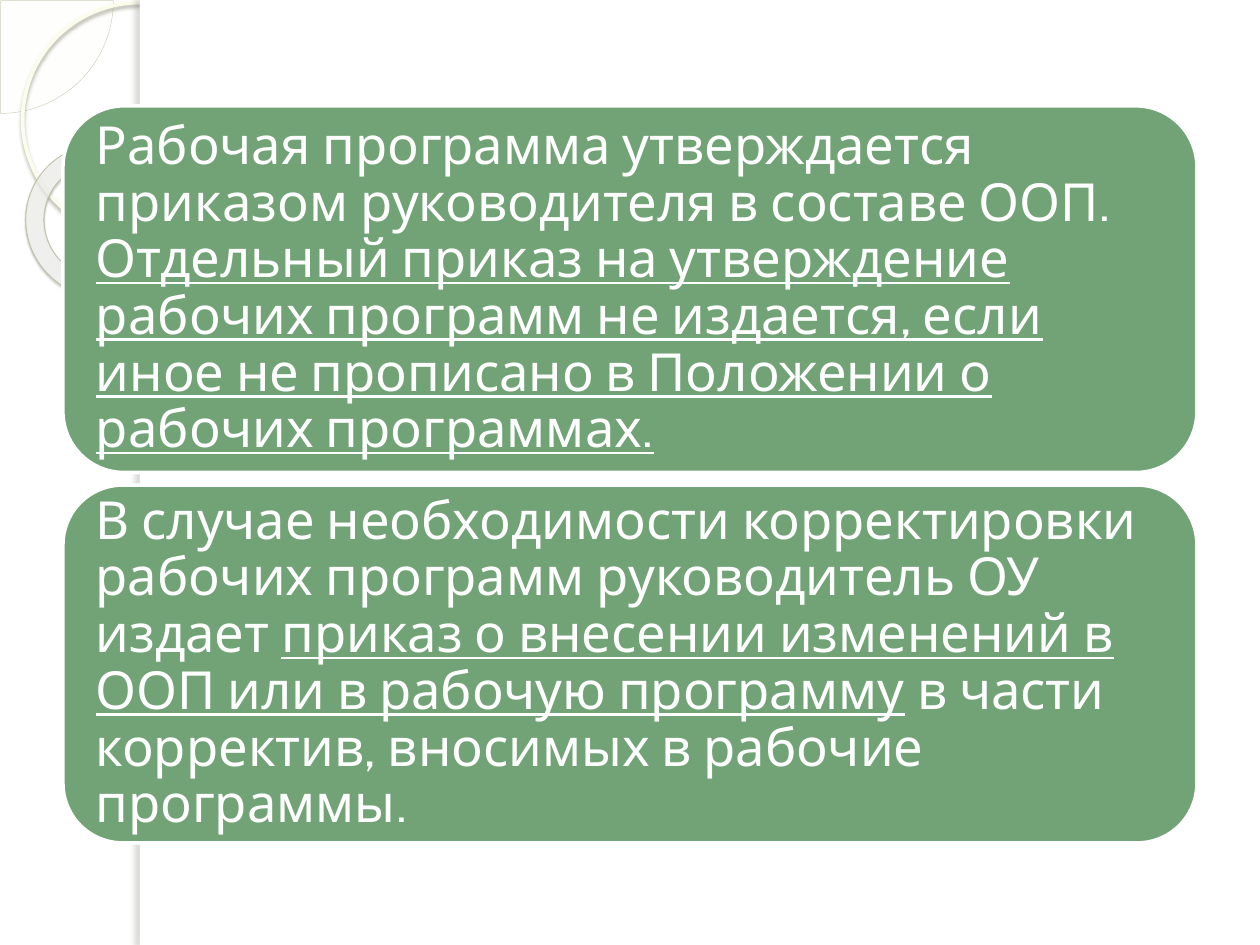
import dataclasses

import pptx
import pptx.dml.color
import pptx.enum.shapes
import pptx.enum.text
import pptx.oxml
import pptx.oxml.ns
import pptx.util

SLIDE_WIDTH, SLIDE_HEIGHT = 10, 7.5
SHAPES = pptx.enum.shapes.MSO_SHAPE
DRAWING_NAMESPACE = pptx.oxml.ns.nsdecls("a")


@dataclasses.dataclass(frozen=True)
class Theme:
    paper: str = "FFFFFF"
    banner: str = "72A376"
    pie: str = "FCFDF8"
    pie_line: str = "CDCFB9"
    ring_line: str = "FBFCEB"
    ring_shadow: tuple = ("AFB0A2", 85, 2, 2, 90)
    donut_stops: tuple = ((0, "FDFDF9", 70), (70, "FFFFFC", 55), (100, "DCDFB4", 60))
    donut_line: str = "C1C2AC"
    donut_shadow: tuple = ("58594F", 35, 1, 1.2, 75)
    edge_shadow: tuple = ("75756E", 25, 3, 3, 180)
    font: str = "Cabin"
    text_size: int = 30


THEME = Theme()
BANNERS = (
    (2.91, (
        ("Рабочая программа утверждается приказом руководителя в составе ООП. ", False),
        ("Отдельный приказ на утверждение рабочих программ не издается, если иное "
         "не прописано в Положении о рабочих программах.", True),
    )),
    (2.84, (
        ("В случае необходимости корректировки рабочих программ руководитель ОУ издает ", False),
        ("приказ о внесении изменений в ООП или в рабочую программу", True),
        (" в части корректив, вносимых в рабочие программы.", False),
    )),
)


def rgb(value):
    return pptx.dml.color.RGBColor.from_string(value)


def color_xml(value, opacity):
    return (f'<a:srgbClr val="{value}">'
            f'<a:alpha val="{opacity * 1000}"/></a:srgbClr>')


def add_shadow(shape, color, opacity, blur, distance, angle):
    shadow = pptx.oxml.parse_xml(
        f'<a:outerShdw {DRAWING_NAMESPACE} blurRad="{pptx.util.Pt(blur)}" '
        f'dist="{pptx.util.Pt(distance)}" dir="{angle * 60000}" '
        f'algn="tl" rotWithShape="0">{color_xml(color, opacity)}</a:outerShdw>')
    shape._element.spPr.find(pptx.oxml.ns.qn("a:effectLst")).append(shadow)


def add_figure(slide, kind, box, fill=None, line=None, line_width=0, shadow=None):
    shape = slide.shapes.add_shape(kind, *map(pptx.util.Inches, box))
    shape.shadow.inherit = False
    if fill:
        shape.fill.solid()
        shape.fill.fore_color.rgb = rgb(fill)
    else:
        shape.fill.background()
    if line:
        shape.line.color.rgb = rgb(line)
        shape.line.width = pptx.util.Pt(line_width)
    else:
        shape.line.fill.background()
    if shadow:
        add_shadow(shape, *shadow)
    return shape


def set_opacity(shape, opacity):
    solid = shape._element.spPr.find(pptx.oxml.ns.qn("a:solidFill"))
    solid[0].append(pptx.oxml.parse_xml(
        f'<a:alpha {DRAWING_NAMESPACE} val="{opacity * 1000}"/>'))


def set_radial_gradient(shape, stops, left, top, right, bottom):
    stops_xml = "".join(f'<a:gs pos="{position * 1000}">{color_xml(color, opacity)}</a:gs>'
                        for position, color, opacity in stops)
    gradient = pptx.oxml.parse_xml(
        f'<a:gradFill {DRAWING_NAMESPACE} rotWithShape="1"><a:gsLst>{stops_xml}</a:gsLst>'
        f'<a:path path="circle"><a:fillToRect l="{left * 1000}" t="{top * 1000}" '
        f'r="{right * 1000}" b="{bottom * 1000}"/></a:path></a:gradFill>')
    properties = shape._element.spPr
    properties.replace(properties.find(pptx.oxml.ns.qn("a:noFill")), gradient)


def add_corner_ornament(slide):
    pie = add_figure(slide, SHAPES.PIE, (-0.89, -0.89, 1.79, 1.79),
                     THEME.pie, THEME.pie_line, 0.25)
    pie.adjustments[0] = 0
    pie.adjustments[1] = 54
    set_opacity(pie, 33)
    add_figure(slide, SHAPES.OVAL, (0.18, 0.02, 1.86, 1.86),
               line=THEME.ring_line, line_width=2.15, shadow=THEME.ring_shadow)
    donut = add_figure(slide, SHAPES.DONUT, (0.2, 1.15, 1.23, 1.21),
                       line=THEME.donut_line, line_width=0.58, shadow=THEME.donut_shadow)
    donut.adjustments[0] = 0.12
    donut.rotation = 38.6
    set_radial_gradient(donut, THEME.donut_stops, -408, -50, 508, 150)


def add_page(slide):
    left = 1.11
    add_figure(slide, SHAPES.RECTANGLE, (left, 0, SLIDE_WIDTH - left, SLIDE_HEIGHT), THEME.paper)
    add_figure(slide, SHAPES.RECTANGLE, (left, 0, 0.08, SLIDE_HEIGHT),
               THEME.paper, shadow=THEME.edge_shadow)


def add_banner(slide, top, height, passages):
    margin = SLIDE_WIDTH * 0.05
    banner = add_figure(slide, SHAPES.ROUNDED_RECTANGLE,
                        (margin, top, SLIDE_WIDTH - 2 * margin, height),
                        THEME.banner, THEME.paper, 2)
    frame = banner.text_frame
    frame.word_wrap = True
    frame.vertical_anchor = pptx.enum.text.MSO_ANCHOR.MIDDLE
    inset = pptx.util.Inches(0.12)
    frame.margin_left = frame.margin_right = inset
    frame.margin_top = frame.margin_bottom = inset
    paragraph = frame.paragraphs[0]
    paragraph.alignment = pptx.enum.text.PP_ALIGN.LEFT
    paragraph.line_spacing = 0.9
    paragraph.font.name = THEME.font
    paragraph.font.size = pptx.util.Pt(THEME.text_size)
    paragraph.font.color.rgb = rgb(THEME.paper)
    for text, underlined in passages:
        run = paragraph.add_run()
        run.text = text
        if underlined:
            run.font.underline = True


def main():
    presentation = pptx.Presentation()
    presentation.slide_width = pptx.util.Inches(SLIDE_WIDTH)
    presentation.slide_height = pptx.util.Inches(SLIDE_HEIGHT)
    slide = presentation.slides.add_slide(presentation.slide_layouts[6])
    add_corner_ornament(slide)
    add_page(slide)
    top, gap = 0.84, 0.1
    for height, passages in BANNERS:
        add_banner(slide, top, height, passages)
        top += height + gap
    presentation.save("out.pptx")


if __name__ == "__main__":
    main()
